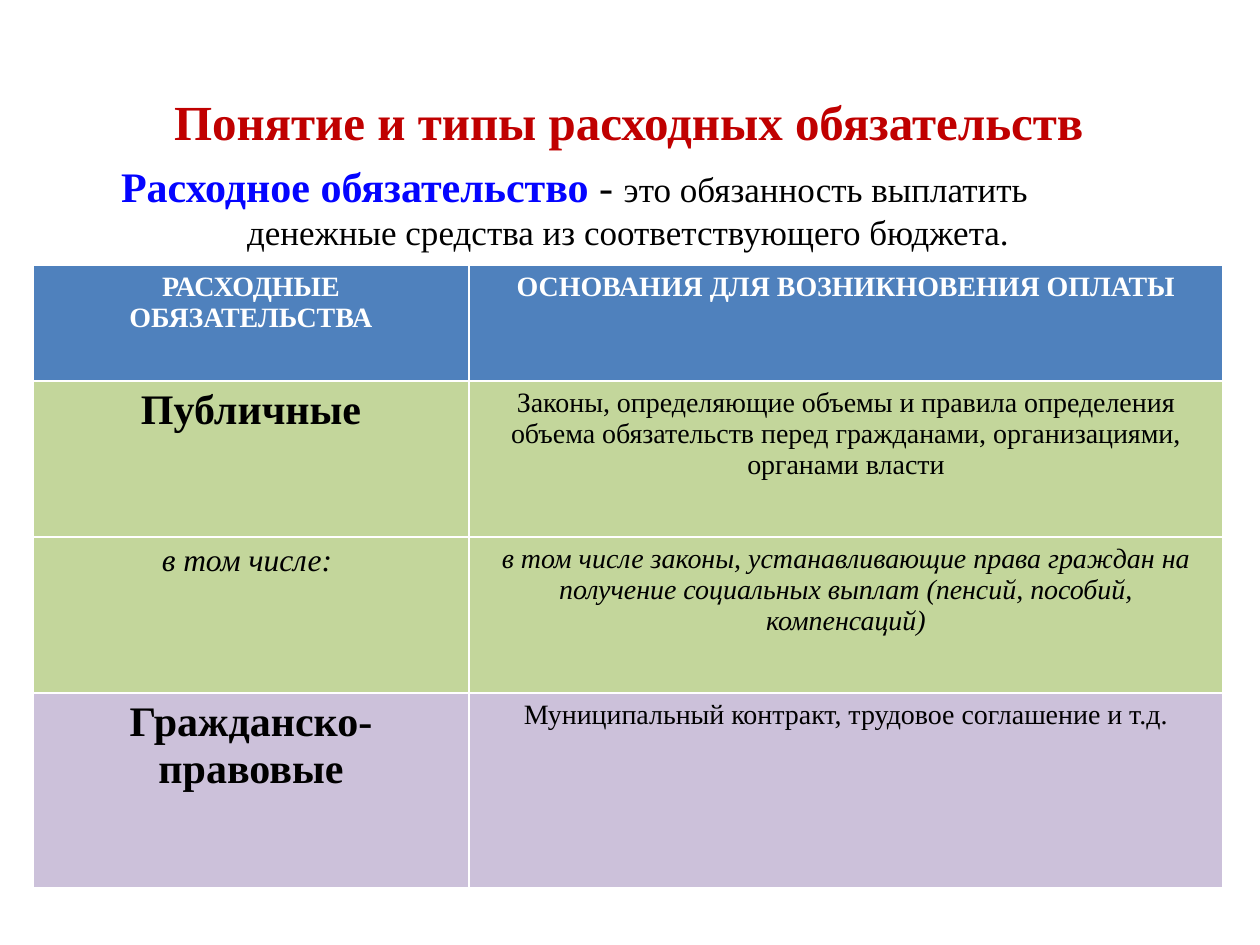
from pptx import Presentation, util as u
from pptx.dml.color import RGBColor
from pptx.enum import text


class Theme:
    font = "Times New Roman"
    white, black, red, blue = "FFFFFF", "000000", "C00000", "0404FF"
    head, public, civil = "4F81BD", "C3D69B", "CCC1DA"
    title, term, body, sub, small = 28, 24, 20, 18, 16


TITLE = "Понятие и типы расходных обязательств"
DEFINITION = [
    ("Расходное обязательство ", dict(size=Theme.term, color=Theme.blue, bold=True)),
    ("- ", dict(size=Theme.term)),
    ("это обязанность выплатить денежные средства из соответствующего бюджета.",
     dict(size=Theme.body)),
]
HEAD = dict(size=Theme.small, color=Theme.white, bold=True)
TERM = dict(size=Theme.term, bold=True)
BASIS = dict(size=Theme.small)
ROWS = [
    (116, Theme.head, ("РАСХОДНЫЕ ОБЯЗАТЕЛЬСТВА", HEAD),
     ("ОСНОВАНИЯ ДЛЯ ВОЗНИКНОВЕНИЯ ОПЛАТЫ", HEAD)),
    (156, Theme.public, ("Публичные", TERM),
     ("Законы, определяющие объемы и правила определения объема обязательств "
      "перед гражданами, организациями, органами власти", BASIS)),
    (156, Theme.public, ("в том числе: ", dict(size=Theme.sub, italic=True)),
     ("в том числе законы, устанавливающие права граждан на получение "
      "социальных выплат (пенсий, пособий, компенсаций)",
      dict(size=Theme.small, italic=True))),
    (195, Theme.civil, ("Гражданско-правовые", TERM),
     ("Муниципальный контракт, трудовое соглашение и т.д.", BASIS)),
]
COLS = [436, 754]


def px(n):
    return u.Emu(round(n * 914400 / 126))


def add_run(p, words, size, color=Theme.black, bold=False, italic=False):
    r = p.add_run()
    r.text = words
    r.font.name, r.font.size = Theme.font, u.Pt(size)
    r.font.bold, r.font.italic = bold, italic
    r.font.color.rgb = RGBColor.from_string(color)


def paint(obj, color):
    obj.fill.solid()
    obj.fill.fore_color.rgb = RGBColor.from_string(color)


def fill_placeholder(sp, box, runs, left, hang=0, right=0):
    sp.left, sp.top, sp.width, sp.height = map(px, box)
    paint(sp, Theme.white)
    tf = sp.text_frame
    tf.word_wrap, tf.auto_size = True, text.MSO_AUTO_SIZE.NONE
    tf.vertical_anchor = text.MSO_ANCHOR.TOP
    tf.margin_left = tf.margin_bottom = 0
    tf.margin_top, tf.margin_right = px(5), px(right)
    p = tf.paragraphs[0]
    p.alignment, p.space_before = text.PP_ALIGN.LEFT, u.Pt(0)
    pPr = p._p.get_or_add_pPr()
    pPr.set("marL", str(px(left)))
    pPr.set("indent", str(px(-hang)))
    pPr.get_or_add_buNone() if hasattr(pPr, "get_or_add_buNone") else pPr.append(
        pPr.makeelement("{http://schemas.openxmlformats.org/drawingml/2006/main}buNone", {}))
    for words, style in runs:
        add_run(p, words, **style)


def add_grid(s, left, top):
    height = sum(row[0] for row in ROWS)
    table = s.shapes.add_table(len(ROWS), len(COLS), px(left), px(top),
                               px(sum(COLS)), px(height)).table
    table.horz_banding = False
    for column, width in zip(table.columns, COLS):
        column.width = px(width)
    for row, (height, color, *cells) in zip(table.rows, ROWS):
        row.height = px(height)
        for cell, (words, style) in zip(row.cells, cells):
            paint(cell, color)
            p = cell.text_frame.paragraphs[0]
            p.alignment = text.PP_ALIGN.CENTER
            add_run(p, words, **style)


def main():
    prs = Presentation()
    prs.slide_width, prs.slide_height = u.Inches(10), u.Inches(7.5)
    s = prs.slides.add_slide(prs.slide_layouts[1])
    title = [(TITLE, dict(size=Theme.title, color=Theme.red, bold=True))]
    fill_placeholder(s.shapes.title, (86, 86, 1110, 79), title, left=88)
    fill_placeholder(s.placeholders[1], (16, 155, 1221, 89), DEFINITION,
                     left=231, hang=126, right=150)
    add_grid(s, 33, 265)
    prs.save("out.pptx")


if __name__ == "__main__":
    main()
